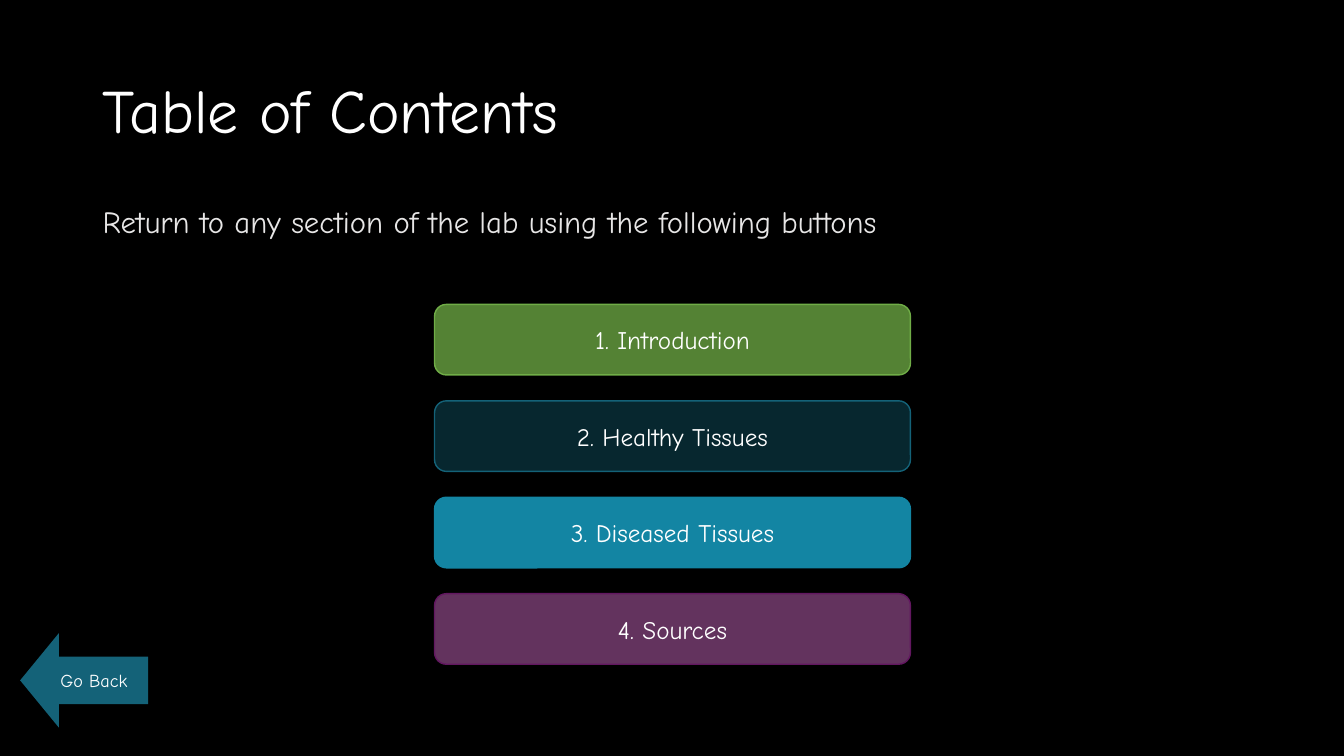
from pptx import Presentation
from pptx.dml.color import RGBColor
from pptx.enum.shapes import MSO_SHAPE
from pptx.enum.text import MSO_ANCHOR, PP_ALIGN
from pptx.util import Emu, Pt

FONT = "Comic Neue"
BLACK = RGBColor(0x00, 0x00, 0x00)
WHITE = RGBColor(0xFF, 0xFF, 0xFF)
PALE_GRAY = RGBColor(0xE7, 0xE6, 0xE6)
GREEN = RGBColor(0x54, 0x82, 0x34)
LIGHT_GREEN = RGBColor(0x70, 0xAD, 0x47)
DARK_TEAL = RGBColor(0x07, 0x27, 0x2F)
TEAL = RGBColor(0x14, 0x62, 0x78)
BLUE = RGBColor(0x13, 0x85, 0xA3)
PURPLE = RGBColor(0x63, 0x33, 0x5E)
DARK_PURPLE = RGBColor(0x62, 0x17, 0x60)

SECTIONS = [
    ("1. Introduction", GREEN, LIGHT_GREEN),
    ("2. Healthy Tissues", DARK_TEAL, TEAL),
    ("3. Diseased Tissues", BLUE, BLUE),
    ("4. Sources", PURPLE, DARK_PURPLE),
]


def px(length):
    return Emu(round(length * 9144))


def place(box):
    return [px(length) for length in box]


def write(shape, text, size, color=WHITE, align=PP_ALIGN.CENTER, anchor=MSO_ANCHOR.MIDDLE):
    frame = shape.text_frame
    frame.word_wrap = True
    frame.vertical_anchor = anchor
    paragraph = frame.paragraphs[0]
    paragraph.alignment = align
    run = paragraph.add_run()
    run.text = text
    run.font.name = FONT
    run.font.size = Pt(size)
    run.font.color.rgb = color
    return paragraph


def add_filled_shape(slide, kind, box, fill, line=None):
    shape = slide.shapes.add_shape(kind, *place(box))
    shape.shadow.inherit = False
    shape.fill.solid()
    shape.fill.fore_color.rgb = fill
    if line is None:
        shape.line.fill.background()
    else:
        shape.line.color.rgb = line
        shape.line.width = Pt(1)
    return shape


def add_heading(slide, box):
    title = slide.shapes.title
    title.left, title.top, title.width, title.height = place(box)
    paragraph = write(title, "Table of Contents", 44, align=PP_ALIGN.LEFT)
    paragraph.line_spacing = 0.9


def add_instruction(slide, box):
    instruction = slide.shapes.add_textbox(*place(box))
    paragraph = write(
        instruction,
        "Return to any section of the lab using the following buttons",
        22, PALE_GRAY, PP_ALIGN.LEFT, MSO_ANCHOR.TOP,
    )
    paragraph.line_spacing = 0.9
    paragraph.space_before = Pt(10)


def add_section_buttons(slide, box):
    left, top, width, height = box
    button_height = 70
    pitch = (height - button_height) / (len(SECTIONS) - 1)
    for index, (label, fill, line) in enumerate(SECTIONS):
        button_box = (left, top + index * pitch, width, button_height)
        button = add_filled_shape(slide, MSO_SHAPE.ROUNDED_RECTANGLE, button_box, fill, line)
        write(button, label, 18)


def add_back_arrow(slide, box):
    arrow = add_filled_shape(slide, MSO_SHAPE.LEFT_ARROW, box, TEAL)
    arrow.adjustments[0] = 0.5
    arrow.adjustments[1] = 0.41
    write(arrow, "Go Back", 13).space_after = Pt(6)


def build_contents_slide(presentation):
    slide = presentation.slides.add_slide(presentation.slide_layouts[5])
    slide.background.fill.solid()
    slide.background.fill.fore_color.rgb = BLACK
    add_back_arrow(slide, (20, 628, 127, 94))
    add_heading(slide, (92, 40, 1150, 145))
    add_instruction(slide, (92, 200, 1150, 70))
    add_section_buttons(slide, (431, 302, 472, 357))


def main():
    presentation = Presentation()
    presentation.slide_width = px(1333)
    presentation.slide_height = px(750)
    build_contents_slide(presentation)
    presentation.save("out.pptx")


if __name__ == "__main__":
    main()
